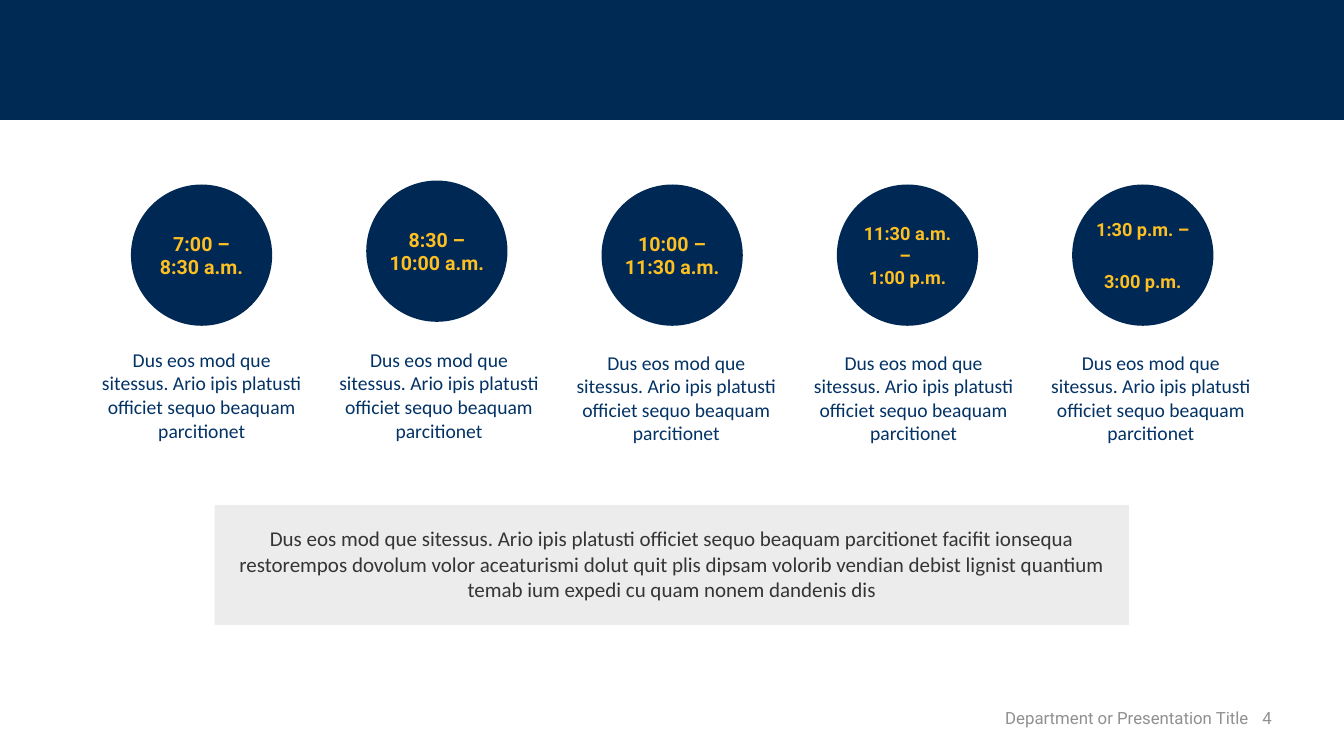
from dataclasses import dataclass

from lxml.etree import SubElement
from pptx import Presentation
from pptx.dml.color import RGBColor
from pptx.enum.shapes import MSO_SHAPE as Shape
from pptx.enum.text import MSO_ANCHOR as Anchor, PP_ALIGN as Align
from pptx.oxml.ns import qn
from pptx.util import Cm, Pt

NAVY, GOLD = "002854", "FEBF23"
CAPTION = "Dus eos mod que sitessus. Ario ipis platusti officiet sequo beaquam parcitionet"
SUMMARY = (
    "Dus eos mod que sitessus. Ario ipis platusti officiet sequo beaquam parcitionet "
    "facifit ionsequa restorempos dovolum volor aceaturismi dolut quit plis dipsam "
    "volorib vendian debist lignist quantium temab ium expedi cu quam nonem dandenis dis"
)


@dataclass
class Box:
    left: float
    top: float
    width: float
    height: float

    def emu(self) -> tuple:
        return Cm(self.left), Cm(self.top), Cm(self.width), Cm(self.height)


@dataclass
class Style:
    size: float
    font: str
    color: str
    bold: bool = False
    align: Align = Align.CENTER


@dataclass
class Slot:
    time: str
    size: float = 14
    circle_top: float = 4.65
    caption_top: float = 8.71


SLOTS = [
    Slot("7:00 –8:30 a.m.", caption_top=8.64),
    Slot("8:30 – 10:00 a.m.", circle_top=4.55, caption_top=8.64),
    Slot("10:00 – 11:30 a.m."),
    Slot("11:30 a.m. – \v1:00 p.m.", size=13),
    Slot("1:30 p.m. – \v3:00 p.m.", size=13),
]


def rgb(color: str) -> RGBColor:
    return RGBColor.from_string(color)


def write(sp, text: str, style: Style) -> None:
    tf = sp.text_frame
    tf.word_wrap = True
    p = tf.paragraphs[0]
    p.text = text
    p.alignment = style.align
    for r in p.runs:
        r.font.size = Pt(style.size)
        r.font.name = style.font
        r.font.bold = style.bold
        r.font.color.rgb = rgb(style.color)


def add_filled(slide, kind: Shape, box: Box, color: str):
    sp = slide.shapes.add_shape(kind, *box.emu())
    sp.shadow.inherit = False
    sp.fill.solid()
    sp.fill.fore_color.rgb = rgb(color)
    sp.line.fill.background()
    return sp


def add_text(slide, box: Box, text: str, style: Style):
    sp = slide.shapes.add_textbox(*box.emu())
    write(sp, text, style)
    return sp


def set_margins(sp, side: float, vertical: float) -> None:
    tf = sp.text_frame
    tf.margin_left = tf.margin_right = Cm(side)
    tf.margin_top = tf.margin_bottom = Cm(vertical)


def set_opacity(sp, percent: int) -> None:
    color = sp.fill._xPr.find(qn("a:solidFill"))[0]
    SubElement(color, qn("a:alpha")).set("val", str(percent * 1000))


def add_slot(slide, index: int, slot: Slot) -> None:
    circle_box = Box(3.3 + 5.93 * index, slot.circle_top, 3.56, 3.56)
    circle = add_filled(slide, Shape.OVAL, circle_box, NAVY)
    write(circle, slot.time, Style(slot.size, "Roboto", GOLD, bold=True))
    set_margins(circle, 0.05, 0.13)
    circle.text_frame.vertical_anchor = Anchor.MIDDLE

    caption_box = Box(2.29 + 5.98 * index, slot.caption_top, 5.59, 3.17)
    add_text(slide, caption_box, CAPTION, Style(14, "Calibri", "033265"))


def add_footer(slide, right: float, width: float, text: str) -> None:
    style = Style(12, "Roboto", "909090", align=Align.RIGHT)
    sp = add_text(slide, Box(right - width, 17.78, width, 0.58), text, style)
    set_margins(sp, 0, 0)
    sp.text_frame.vertical_anchor = Anchor.BOTTOM
    sp.text_frame.paragraphs[0].line_spacing = 0.9


def main() -> None:
    prs = Presentation()
    prs.slide_width, prs.slide_height = Cm(33.87), Cm(19.05)
    slide = prs.slides.add_slide(prs.slide_layouts[6])

    # Header band
    add_filled(slide, Shape.RECTANGLE, Box(0, 0, 33.87, 3.02), "002954")

    # Time slots with captions
    for index, slot in enumerate(SLOTS):
        add_slot(slide, index, slot)

    # Summary panel
    panel = add_filled(slide, Shape.RECTANGLE, Box(5.41, 12.73, 23.04, 3.02), "464646")
    set_opacity(panel, 10)
    add_text(slide, Box(5.36, 13.13, 23.14, 2.64), SUMMARY, Style(15, "Calibri", "353535"))

    # Footer title and page number
    add_footer(slide, 31.47, 12, "Department or Presentation Title")
    add_footer(slide, 32.05, 0.5, "4")

    prs.save("out.pptx")


if __name__ == "__main__":
    main()
